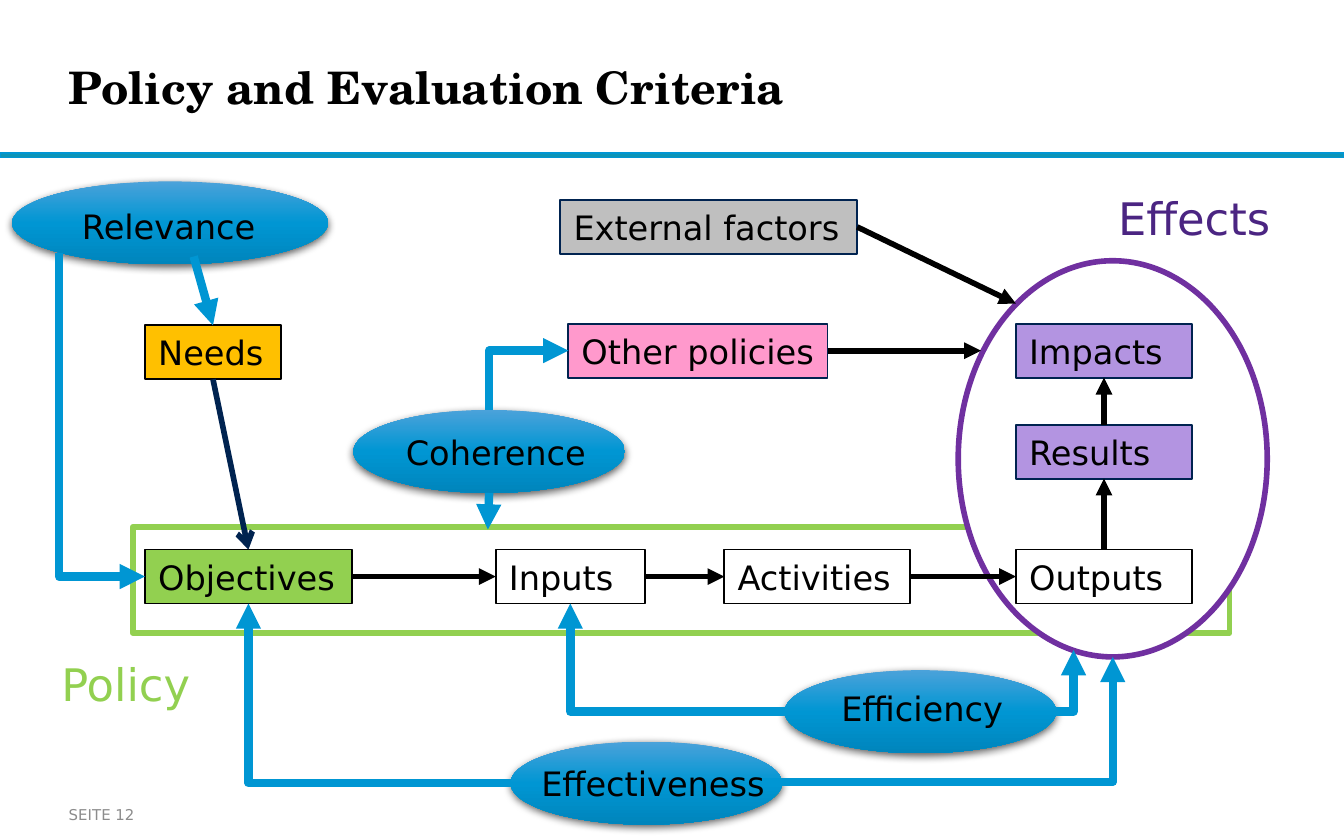
from lxml import etree
from pptx import Presentation
from pptx import util as u
from pptx.dml.color import RGBColor
from pptx.enum import shapes, text
from pptx.oxml import parse_xml
from pptx.oxml.ns import nsdecls, qn

BODY, HEADING = "DejaVu Sans", "TeX Gyre Schola"
BLACK, WHITE, BLUE, NAVY = "000000", "FFFFFF", "0096D3", "002350"
GREEN, PURPLE, LILAC = "92D050", "7030A0", "B394E1"
BOX_HEIGHT, OVAL_HEIGHT = 1.02, 1.57
CHAIN_TOP, EFFECTS_LEFT = 10.39, 19.2

FRAMES = {
    "Policy": ("RECTANGLE", 2.51, 9.96, 20.73, 2.01, GREEN),
    "Effects": ("OVAL", 18.11, 4.93, 5.84, 7.49, PURPLE),
}
BOXES = {
    "Needs": (2.74, 6.15, 2.57, "FFC000", BLACK),
    "Objectives": (2.74, CHAIN_TOP, 3.91, GREEN, BLACK),
    "Inputs": (9.37, CHAIN_TOP, 2.82, WHITE, BLACK),
    "Activities": (13.69, CHAIN_TOP, 3.51, WHITE, BLACK),
    "Outputs": (EFFECTS_LEFT, CHAIN_TOP, 3.33, WHITE, BLACK),
    "Results": (EFFECTS_LEFT, 8.03, 3.33, LILAC, NAVY),
    "Impacts": (EFFECTS_LEFT, 6.12, 3.33, LILAC, NAVY),
    "External factors": (10.59, 3.78, 5.61, "BFBFBF", NAVY),
    "Other policies": (10.74, 6.12, 4.9, "FF99CC", NAVY),
}
CRITERIA = {
    "Efficiency": ((14.83, 12.67, 5.13), (15.65, 12.88, 3.81)),
    "Effectiveness": ((9.65, 14.02, 5.13), (9.98, 14.3, 4.78)),
    "Relevance": ((0.23, 3.43, 5.97), (1.3, 3.76, 4.57)),
    "Coherence": ((6.68, 7.75, 5.13), (7.42, 8.03, 3.91)),
}
FRAME_LABELS = [
    ("Effects", 20.88, 3.48, 4.09, "4B2582"),
    ("Policy", 0.91, 12.29, 3.25, GREEN),
]
FLOWS = [
    (("Objectives", "right"), ("Inputs", "left")),
    (("Inputs", "right"), ("Activities", "left")),
    (("Activities", "right"), ("Outputs", "left")),
    (("Outputs", "top"), ("Results", "bottom")),
    (("Results", "top"), ("Impacts", "bottom")),
    (("External factors", "right"), (19.2, 5.74)),
    (("Other policies", "right"), (18.54, 6.63)),
]
CRITERION_ARROWS = [
    ((3.66, 4.85), ("Needs", "top"), "straight"),
    ((1.12, 4.78), ("Objectives", "left"), "down first"),
    (("Coherence", "top"), ("Other policies", "left"), "down first"),
    (("Coherence", "bottom"), (9.22, 10.01), "straight"),
    (("Effectiveness", "left"), ("Objectives", "bottom"), "across first"),
    ((14.4, 14.78), ("Effects", "bottom"), "across first"),
    (("Efficiency", "left"), ("Inputs", "bottom"), "across first"),
    (("Efficiency", "right"), (20.29, 12.29), "across first"),
]

AREAS = {name: frame[1:5] for name, frame in FRAMES.items()}
AREAS.update({name: (*box[:3], BOX_HEIGHT) for name, box in BOXES.items()})
AREAS.update({name: (*oval, OVAL_HEIGHT) for name, (oval, _) in CRITERIA.items()})

deck = Presentation()
deck.slide_width, deck.slide_height = u.Cm(25.4), u.Cm(15.88)
slide = deck.slides.add_slide(deck.slide_layouts[5])


def color(code):
    return RGBColor.from_string(code)


def lengths(*values):
    return [u.Cm(value) for value in values]


def write(holder, words, size=18, font=BODY, ink=BLACK, bold=False, inset=(0.25, 0.13),
          anchor=text.MSO_ANCHOR.TOP):
    frame = holder.text_frame
    frame.word_wrap = True
    frame.auto_size = text.MSO_AUTO_SIZE.NONE
    frame.vertical_anchor = anchor
    frame.margin_left = frame.margin_right = u.Cm(inset[0])
    frame.margin_top = frame.margin_bottom = u.Cm(inset[1])
    paragraph = frame.paragraphs[0]
    paragraph.alignment = text.PP_ALIGN.LEFT
    run = paragraph.add_run()
    run.text = words
    run.font.size, run.font.name, run.font.bold = u.Pt(size), font, bold
    run.font.color.rgb = color(ink)


def label(words, left, top, width, height, **style):
    write(slide.shapes.add_textbox(*lengths(left, top, width, height)), words, **style)


def draw(kind, area, fill, outline, weight):
    shape = slide.shapes.add_shape(shapes.MSO_SHAPE[kind], *lengths(*area))
    shape.shadow.inherit = False
    shape.fill.solid()
    shape.fill.fore_color.rgb = color(fill)
    shape.line.color.rgb = color(outline)
    shape.line.width = u.Pt(weight)
    return shape


def draw_criterion(area):
    oval = slide.shapes.add_shape(shapes.MSO_SHAPE.OVAL, *lengths(*area))
    oval.line.fill.background()
    oval.shadow.inherit = False
    stops = "".join(f'<a:gs pos="{pos}"><a:srgbClr val="{code}"/></a:gs>'
                    for pos, code in ((0, "4BA2DA"), (50000, BLUE), (100000, "0085BC")))
    properties = oval._element.spPr
    properties.insert(2, parse_xml(
        f'<a:gradFill {nsdecls("a")} rotWithShape="1"><a:gsLst>{stops}</a:gsLst>'
        '<a:lin ang="5400000" scaled="0"/></a:gradFill>'))
    properties.find(qn("a:effectLst")).append(parse_xml(
        f'<a:outerShdw {nsdecls("a")} blurRad="{u.Pt(4.5)}" dist="{u.Pt(1.5)}" dir="5400000" '
        'rotWithShape="0"><a:srgbClr val="000000"><a:alpha val="63000"/></a:srgbClr></a:outerShdw>'))


def point(place):
    if place[0] not in AREAS:
        return place
    name, side = place
    left, top, width, height = AREAS[name]
    across, down = {"left": (0, 0.5), "right": (1, 0.5), "top": (0.5, 0), "bottom": (0.5, 1)}[side]
    return left + across * width, top + down * height


def arrow(start, end, ink, weight, route="straight", head="triangle"):
    (x1, y1), (x2, y2) = point(start), point(end)
    turned = route == "down first"
    if turned:
        mid_x, mid_y, dx, dy = (x1 + x2) / 2, (y1 + y2) / 2, x2 - x1, y2 - y1
        x1, y1, x2, y2 = mid_x - dy / 2, mid_y + dx / 2, mid_x + dy / 2, mid_y - dx / 2
    kind = shapes.MSO_CONNECTOR.STRAIGHT if route == "straight" else shapes.MSO_CONNECTOR.ELBOW
    link = slide.shapes.add_connector(kind, *lengths(x1, y1, x2, y2))
    link.line.color.rgb = color(ink)
    link.line.width = u.Pt(weight)
    properties = link._element.spPr
    if route != "straight":
        properties.find(qn("a:prstGeom")).set("prst", "bentConnector2")
    if turned:
        properties.find(qn("a:xfrm")).set("rot", "5400000")
    etree.SubElement(properties.find(qn("a:ln")), qn("a:tailEnd"), type=head)
    etree.SubElement(properties, qn("a:effectLst"))


title = slide.shapes.title
title.left, title.top, title.width, title.height = lengths(1.3, 0.38, 19, 2.51)
write(title, "Policy and Evaluation Criteria", size=24, font=HEADING, bold=True,
      inset=(0, 0), anchor=text.MSO_ANCHOR.MIDDLE)
draw("RECTANGLE", (0, 2.9, 25.4, 0.08), "0C94B7", BLUE, 1)
label("SEITE 12", 1.3, 15.04, 2.49, 0.71, size=8, ink="8C8C8C",
      inset=(0, 0.13), anchor=text.MSO_ANCHOR.MIDDLE)

for name, (kind, *_, outline) in FRAMES.items():
    draw(kind, AREAS[name], WHITE, outline, 3)
for name, (*_, fill, outline) in BOXES.items():
    write(draw("RECTANGLE", AREAS[name], fill, outline, 1), name)
for name, (_, caption) in CRITERIA.items():
    draw_criterion(AREAS[name])
    label(name, *caption, BOX_HEIGHT)
for name, left, top, width, ink in FRAME_LABELS:
    label(name, left, top, width, 1.27, size=24, ink=ink)

arrow(("Needs", "bottom"), ("Objectives", "top"), NAVY, 3, head="arrow")
for start, end in FLOWS:
    arrow(start, end, BLACK, 3)
for start, end, route in CRITERION_ARROWS:
    arrow(start, end, BLUE, 4.5, route)

deck.save("out.pptx")
